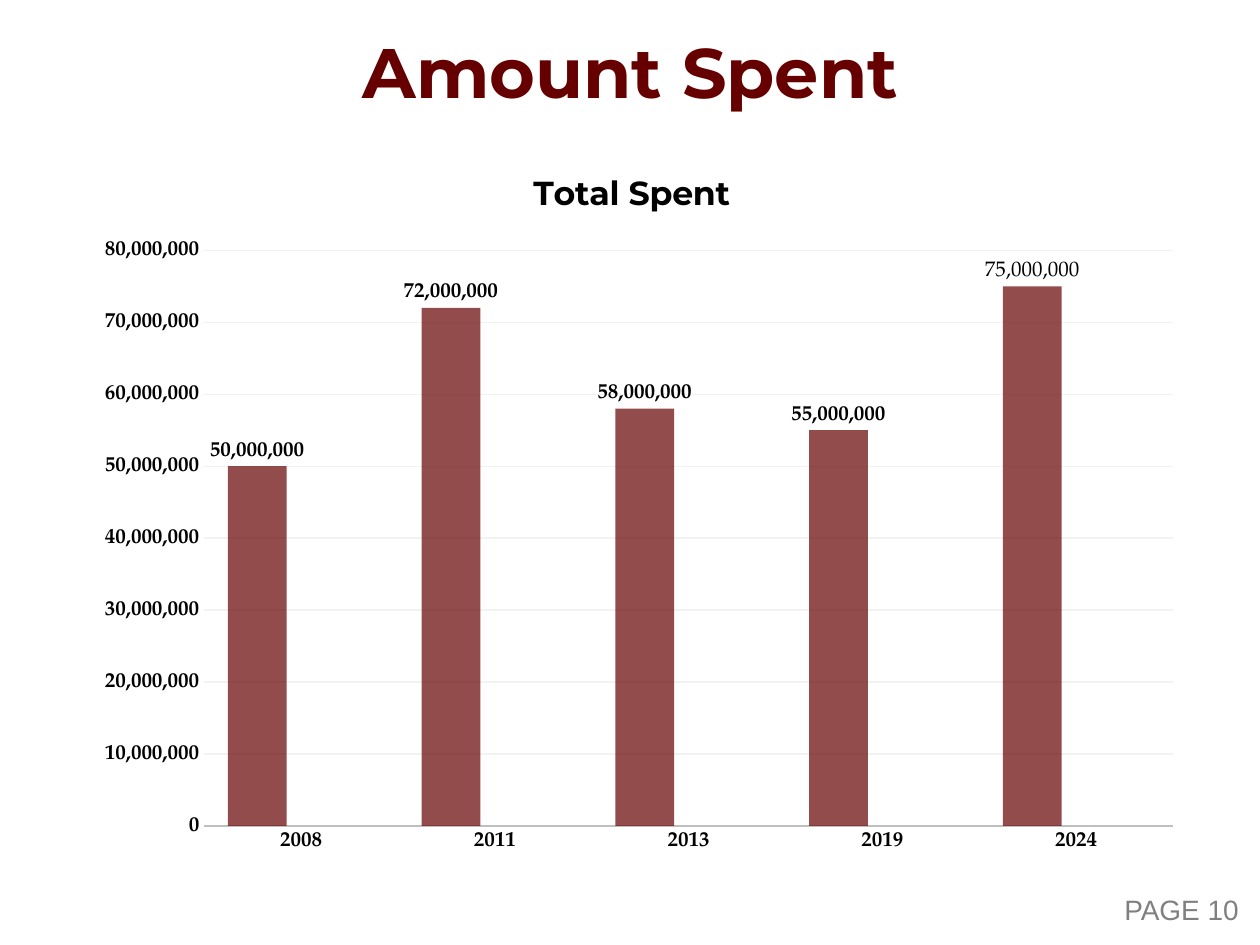
import dataclasses

import lxml.etree
import pptx
import pptx.chart.data
import pptx.dml.color
import pptx.enum.chart
import pptx.enum.text
import pptx.oxml.ns
import pptx.util

Cm = pptx.util.Cm
Pt = pptx.util.Pt
ALIGN = pptx.enum.text.PP_ALIGN
qn = pptx.oxml.ns.qn


@dataclasses.dataclass(frozen=True)
class Theme:
    head: str = "Montserrat"
    body: str = "TeX Gyre Pagella"
    foot: str = "Arial"
    black: str = "000000"
    maroon: str = "660000"
    gray: str = "808080"
    axis: str = "BFBFBF"
    grid: str = "F2F2F2"
    bars: tuple = ("660000", "757871", "6E4C1E")
    alpha: int = 70
    big: int = 40
    mid: int = 19
    page: int = 16
    label: int = 12
    base: int = 10


THEME = Theme()
YEARS = ("2008", "2011", "2013", "2019", "2024")
SPENT = (50000000, 72000000, 58000000, 55000000, 75000000)
BLANK = (None,) * len(YEARS)
ROWS = (("Series 1", SPENT), ("Series 2", BLANK), ("Series 3", BLANK))


def color(code):
    return pptx.dml.color.RGBColor.from_string(code)


def style(font, face, size, tint, bold=False):
    font.name = face
    font.size = Pt(size)
    font.bold = bold
    font.color.rgb = color(tint)


def add_run(para, text, *look):
    run = para.add_run()
    run.text = text
    style(run.font, *look)


def add_text(slide, box, text, align, *look):
    frame = slide.shapes.add_textbox(*map(Cm, box)).text_frame
    frame.word_wrap = True
    frame.vertical_anchor = pptx.enum.text.MSO_ANCHOR.MIDDLE
    para = frame.paragraphs[0]
    para.alignment = align
    add_run(para, text, *look)


def place(parent, **spots):
    layout = parent.find(qn("c:layout"))
    if layout is None:
        layout = lxml.etree.Element(qn("c:layout"))
        text = parent.find(qn("c:tx"))
        parent.insert(0 if text is None else parent.index(text) + 1, layout)
    for child in list(layout):
        layout.remove(child)
    manual = lxml.etree.SubElement(layout, qn("c:manualLayout"))
    for name, value in spots.items():
        item = lxml.etree.SubElement(manual, qn(f"c:{name}"))
        item.set("val", str(value))


def set_title(chart):
    chart.has_title = True
    title = chart.chart_title
    title.include_in_layout = False
    para = title.text_frame.paragraphs[0]
    add_run(para, "Total Spent", THEME.head, THEME.mid, THEME.black, True)
    place(title._element, xMode="edge", yMode="edge", x=0.4, y=0.02)


def set_axes(chart):
    tick = pptx.enum.chart.XL_TICK_MARK.NONE
    for axis in (chart.category_axis, chart.value_axis):
        axis.major_tick_mark = axis.minor_tick_mark = tick
        style(axis.tick_labels.font, THEME.body, THEME.label, THEME.black, True)
    line = chart.category_axis.format.line
    line.color.rgb = color(THEME.axis)
    line.width = Pt(1.25)
    scale = chart.value_axis
    scale.minimum_scale, scale.maximum_scale = 0, 80000000
    scale.major_unit = 10000000
    scale.format.line.fill.background()
    scale.tick_labels.number_format = "#,##0"
    scale.tick_labels.number_format_is_linked = False
    scale.has_major_gridlines = True
    grid = scale.major_gridlines.format.line
    grid.color.rgb = color(THEME.grid)
    grid.width = Pt(0.75)


def set_bars(plot):
    plot.gap_width, plot.overlap = 80, 25
    plot.vary_by_categories = False
    for row, tint in zip(plot.series, THEME.bars):
        row.invert_if_negative = False
        row.format.fill.solid()
        row.format.fill.fore_color.rgb = color(tint)
        row.format.line.fill.background()
        for fill in row._element.spPr.iter(qn("a:srgbClr")):
            alpha = lxml.etree.SubElement(fill, qn("a:alpha"))
            alpha.set("val", str(THEME.alpha * 1000))


def set_labels(row):
    end = pptx.enum.chart.XL_LABEL_POSITION.OUTSIDE_END
    labels = row.data_labels
    labels.show_value = True
    labels.position = end
    labels.number_format = "#,##0"
    labels.number_format_is_linked = False
    style(labels.font, THEME.body, THEME.label, THEME.black, True)
    last = row.points[len(YEARS) - 1].data_label
    style(last.font, THEME.body, THEME.label, THEME.black)
    last.position = end


def add_bars(slide, box):
    data = pptx.chart.data.CategoryChartData(number_format="#,##0")
    data.categories = YEARS
    for name, values in ROWS:
        data.add_series(name, values)
    kind = pptx.enum.chart.XL_CHART_TYPE.COLUMN_CLUSTERED
    chart = slide.shapes.add_chart(kind, *map(Cm, box), data).chart
    chart.has_legend = False
    style(chart.font, THEME.body, THEME.base, THEME.black)
    set_title(chart)
    set_axes(chart)
    set_bars(chart.plots[0])
    set_labels(chart.plots[0].series[0])
    area = chart._chartSpace.chart.plotArea
    place(area, layoutTarget="inner", xMode="edge", yMode="edge",
          x=0.11, y=0.14, w=0.87, h=0.8)


def main():
    deck = pptx.Presentation()
    deck.slide_width, deck.slide_height = Cm(25.4), Cm(19.05)
    slide = deck.slides.add_slide(deck.slide_layouts[6])
    add_text(slide, (21.16, 17.86, 4.06, 0.94), "PAGE 10", ALIGN.RIGHT,
             THEME.foot, THEME.page, THEME.gray)
    add_text(slide, (0.13, 0.18, 25.15, 2.49), "Amount Spent", ALIGN.CENTER,
             THEME.head, THEME.big, THEME.maroon, True)
    add_bars(slide, (1.65, 3.02, 22.45, 14.5))
    deck.save("out.pptx")


if __name__ == "__main__":
    main()
